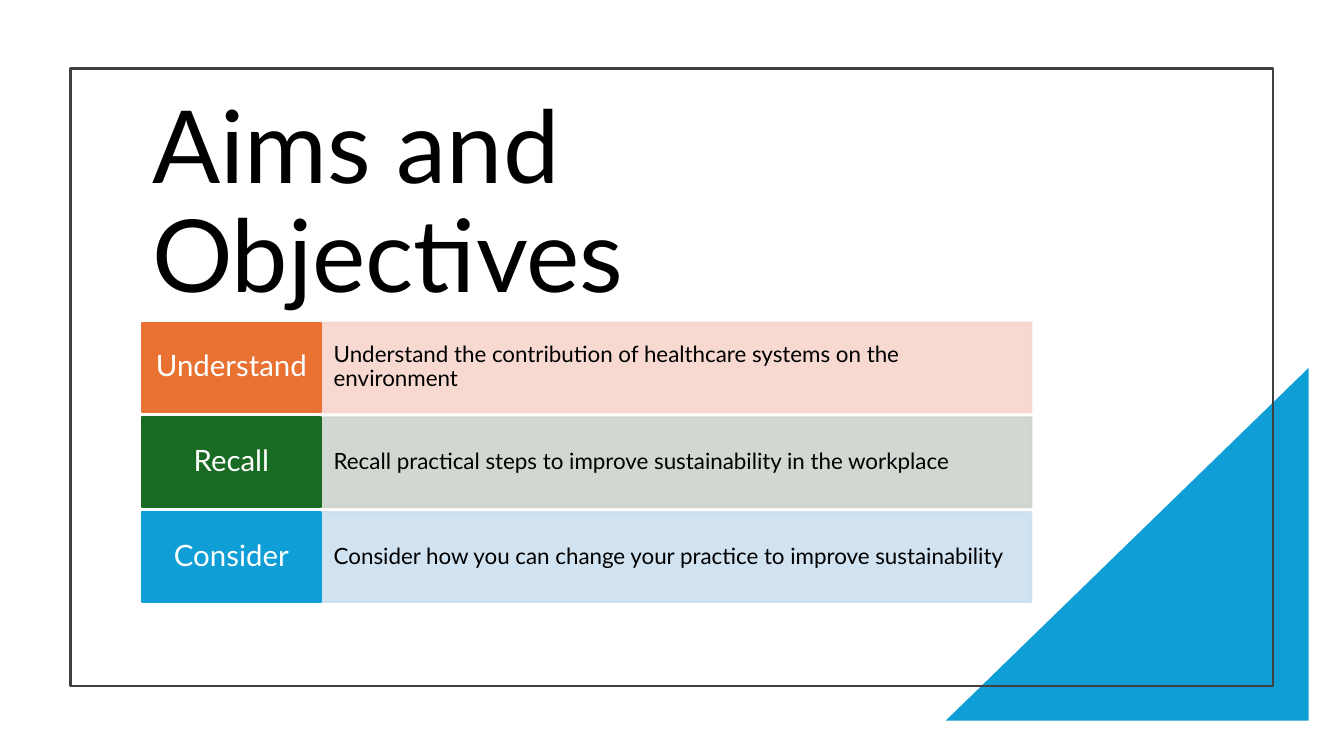
from lxml.etree import SubElement
from pptx import Presentation
from pptx.dml.color import RGBColor
from pptx.enum.shapes import MSO_SHAPE as Shape
from pptx.enum.text import MSO_ANCHOR as Anchor, MSO_AUTO_SIZE as AutoSize, PP_ALIGN as Align
from pptx.oxml.ns import qn
from pptx.util import Inches, Pt


def add_block(kind, left, top, width, height, fill=None, line=None):
    block = page.shapes.add_shape(kind, Inches(left), Inches(top), Inches(width), Inches(height))
    block.shadow.inherit = False
    for part, color in ((block.fill, fill), (block.line.fill, line)):
        if color:
            part.solid()
            part.fore_color.rgb = RGBColor.from_string(color)
        else:
            part.background()
    if line:
        block.line.width = Pt(1.5)
    return block


def write(box, text, size, color, align, inset_x, inset_y):
    frame = box.text_frame
    frame.word_wrap = True
    frame.auto_size = AutoSize.NONE
    frame.vertical_anchor = Anchor.MIDDLE
    frame.margin_left = frame.margin_right = Inches(inset_x)
    frame.margin_top = frame.margin_bottom = Inches(inset_y)
    para = frame.paragraphs[0]
    para.text = text
    para.alignment = align
    para.line_spacing = 0.9
    para.font.name = "Lato"
    para.font.size = Pt(size)
    para.font.color.rgb = RGBColor.from_string(color)


deck = Presentation()
deck.slide_width, deck.slide_height = Inches(13.33), Inches(7.5)
page = deck.slides.add_slide(deck.slide_layouts[5])

# Corner triangle, mirrored so the right angle sits bottom right
corner = add_block(Shape.RIGHT_TRIANGLE, 9.38, 3.65, 3.6, 3.5, fill="0F9ED5")
corner._element.spPr.find(qn("a:xfrm")).set("flipH", "1")

# Page frame
add_block(Shape.RECTANGLE, 0.7, 0.68, 11.93, 6.13, line="404040")

# Title
title = page.shapes.title
title.left, title.top = Inches(1.41), Inches(1.15)
title.width, title.height = Inches(8.83), Inches(1.77)
write(title, "Aims and Objectives\u00a0".strip(), 72, "000000", Align.LEFT, 0.1, 0.05)

# Objectives: a pale statement bar with a strong label at its left
objectives = [
    ("Understand", "Understand the contribution of healthcare systems on the environment", "E97132", "F7D5CE"),
    ("Recall", "Recall practical steps to improve sustainability in the workplace", "196B24", "CCD4CD"),
    ("Consider", "Consider how you can change your practice to improve sustainability", "0F9ED5", "CCDFEF"),
]
for row, (label, statement, strong, pale) in enumerate(objectives):
    top = 3.2 + row * 0.94
    bar = add_block(Shape.RECTANGLE, 3.17, top, 7.06, 0.89, pale, pale)
    for color in bar._element.spPr.iter(qn("a:srgbClr")):
        SubElement(color, qn("a:alpha")).set("val", "90000")
    write(bar, statement, 16, "000000", Align.LEFT, 0.14, 0.23)
    tag = add_block(Shape.RECTANGLE, 1.41, top, 1.77, 0.89, strong, strong)
    write(tag, label, 21, "FFFFFF", Align.CENTER, 0.09, 0.09)

deck.save("out.pptx")
